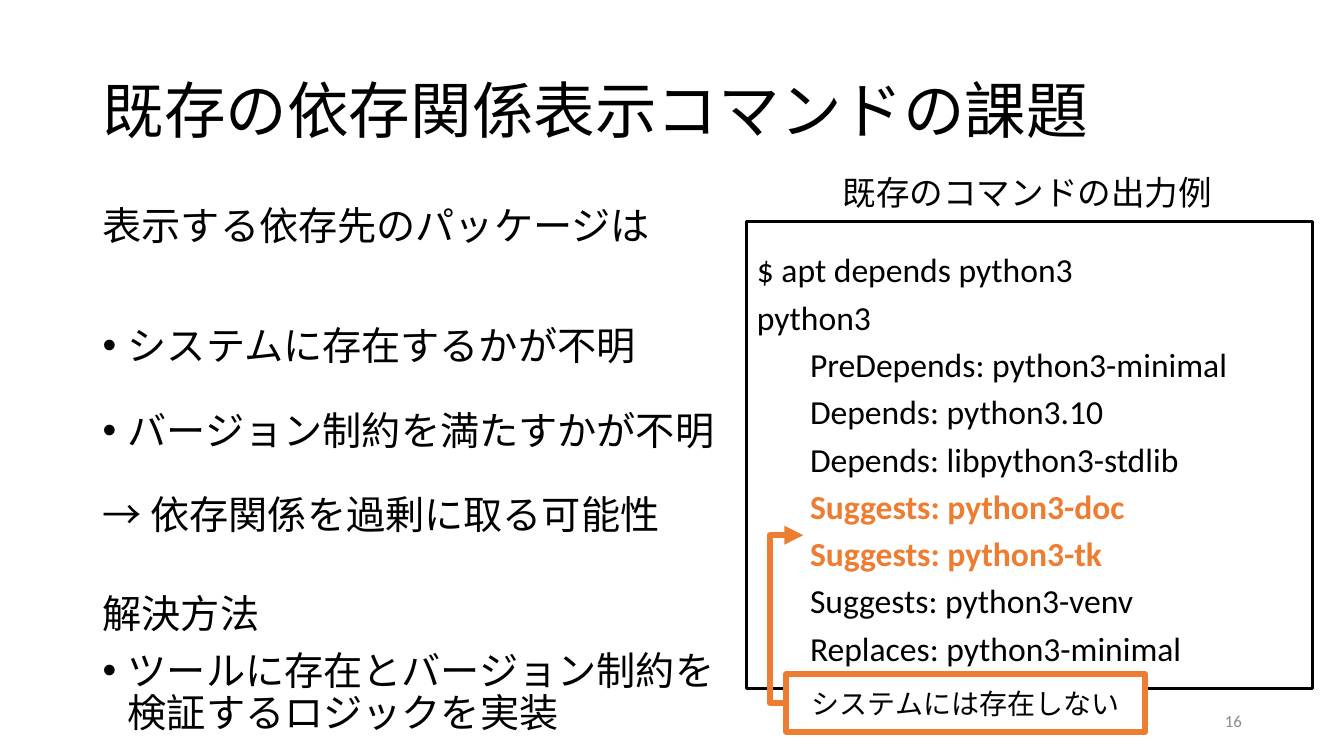
from lxml.etree import SubElement
from pptx import Presentation
from pptx.dml.color import RGBColor
from pptx.enum.shapes import MSO_CONNECTOR as Connector, MSO_SHAPE as Shape
from pptx.enum.text import MSO_ANCHOR as Anchor, PP_ALIGN as Align
from pptx.oxml.ns import qn
from pptx.util import Pt

COLORS = {"text": "000000", "accent": "ED7D31", "paper": "FFFFFF", "muted": "8C8C8C"}
FONT = "Calibri"
BULLET_INDENT = 18
OUTPUT_INDENT = 38

# Body lines: text, bulleted, line spacing, space before in points
BODY = [
    ("表示する依存先のパッケージは", False, 0.9, 10),
    ("システムに存在するかが不明", True, 1.5, 35),
    ("バージョン制約を満たすかが不明", True, 1.5, 10),
    ("→ 依存関係を過剰に取る可能性", False, 1.5, 10),
    ("解決方法", False, 0.9, 41),
    ("ツールに存在とバージョン制約を\v検証するロジックを実装", True, 0.9, 10),
]

COMMAND = ["$ apt depends python3", "python3"]
DEPENDENCIES = [
    "PreDepends: python3-minimal",
    "Depends: python3.10",
    "Depends: libpython3-stdlib",
    "Suggests: python3-doc",
    "Suggests: python3-tk",
    "Suggests: python3-venv",
    "Replaces: python3-minimal",
]
MISSING = {"Suggests: python3-doc", "Suggests: python3-tk"}


def color(name):
    return RGBColor.from_string(COLORS[name])


def write(para, text, size, color_name="text", bold=False, **formats):
    para.text = text
    for name, value in formats.items():
        setattr(para, name, value)
    for span in para.runs:
        for name, value in {"name": FONT, "size": Pt(size), "bold": bold}.items():
            setattr(span.font, name, value)
        span.font.color.rgb = color(color_name)


def indent(para, left, bullet=False):
    properties = para._p.get_or_add_pPr()
    properties.set("marL", str(Pt(left)))
    if bullet:
        properties.set("indent", str(-Pt(left)))
        SubElement(properties, qn("a:buFont"), typeface="Arial")
        SubElement(properties, qn("a:buChar"), char="•")


def paragraphs(frame, count):
    return [frame.paragraphs[0]] + [frame.add_paragraph() for _ in range(count - 1)]


def add_text(page, bounds, anchor=Anchor.TOP, wrap=True):
    frame = page.shapes.add_textbox(*map(Pt, bounds)).text_frame
    frame.word_wrap = wrap
    frame.vertical_anchor = anchor
    return frame


def add_frame(page, bounds, line, width, fill=None):
    box = page.shapes.add_shape(Shape.RECTANGLE, *map(Pt, bounds))
    box.shadow.inherit = False
    if fill:
        box.fill.solid()
        box.fill.fore_color.rgb = color(fill)
    else:
        box.fill.background()
    box.line.color.rgb = color(line)
    box.line.width = Pt(width)
    box.text_frame.word_wrap = True
    box.text_frame.vertical_anchor = Anchor.MIDDLE
    return box.text_frame


def add_bent_arrow(page, start, end, bend, line, width):
    arrow = page.shapes.add_connector(Connector.ELBOW, *map(Pt, start + end))
    arrow.line.color.rgb = color(line)
    arrow.line.width = Pt(width)
    properties = arrow._element.spPr
    SubElement(properties.find(qn("a:ln")), qn("a:tailEnd"), type="triangle")
    SubElement(properties, qn("a:effectLst"))
    guides = properties.find(qn("a:prstGeom")).get_or_add_avLst()
    SubElement(guides, qn("a:gd"), name="adj1", fmla=f"val {round(bend * 100000)}")


def add_body(page):
    frame = add_text(page, (66.24, 144, 828, 396))
    for para, line in zip(paragraphs(frame, len(BODY)), BODY):
        text, bullet, spacing, before = line
        write(para, text, 28, line_spacing=spacing, space_before=Pt(before))
        if bullet:
            indent(para, BULLET_INDENT, bullet=True)


def add_output(page):
    frame = add_frame(page, (533.52, 158.4, 403.92, 333.36), "text", 2.25)
    lines = COMMAND + DEPENDENCIES
    for para, text in zip(paragraphs(frame, len(lines)), lines):
        missing = text in MISSING
        write(para, text, 24, "accent" if missing else "text", missing,
              line_spacing=Pt(33.8), alignment=Align.LEFT)
        if text in DEPENDENCIES:
            indent(para, OUTPUT_INDENT)


def main():
    deck = Presentation()
    deck.slide_width, deck.slide_height = Pt(960), Pt(540)
    page = deck.slides.add_slide(deck.slide_layouts[6])

    # Title and argument
    title = add_text(page, (66.24, 28.8, 828, 104.4), Anchor.MIDDLE)
    write(title.paragraphs[0], "既存の依存関係表示コマンドの課題", 44, line_spacing=0.9)
    add_body(page)

    # Slide number
    number = add_text(page, (678.24, 500.4, 216, 28.8), Anchor.MIDDLE)
    write(number.paragraphs[0], "16", 12, "muted", alignment=Align.RIGHT)

    # Command output with its caption
    caption = add_text(page, (594.72, 119.52, 280.8, 36), wrap=False)
    write(caption.paragraphs[0], "既存のコマンドの出力例", 24)
    add_output(page)

    # Callout to the missing packages
    callout = add_frame(page, (561.6, 481.68, 256.32, 41.04), "accent", 4.5, "paper")
    write(callout.paragraphs[0], "システムには存在しない", 20, alignment=Align.CENTER)
    add_bent_arrow(page, (561.6, 502.2), (573.84, 382.32), -0.95, "accent", 4.5)

    deck.save("out.pptx")


if __name__ == "__main__":
    main()
